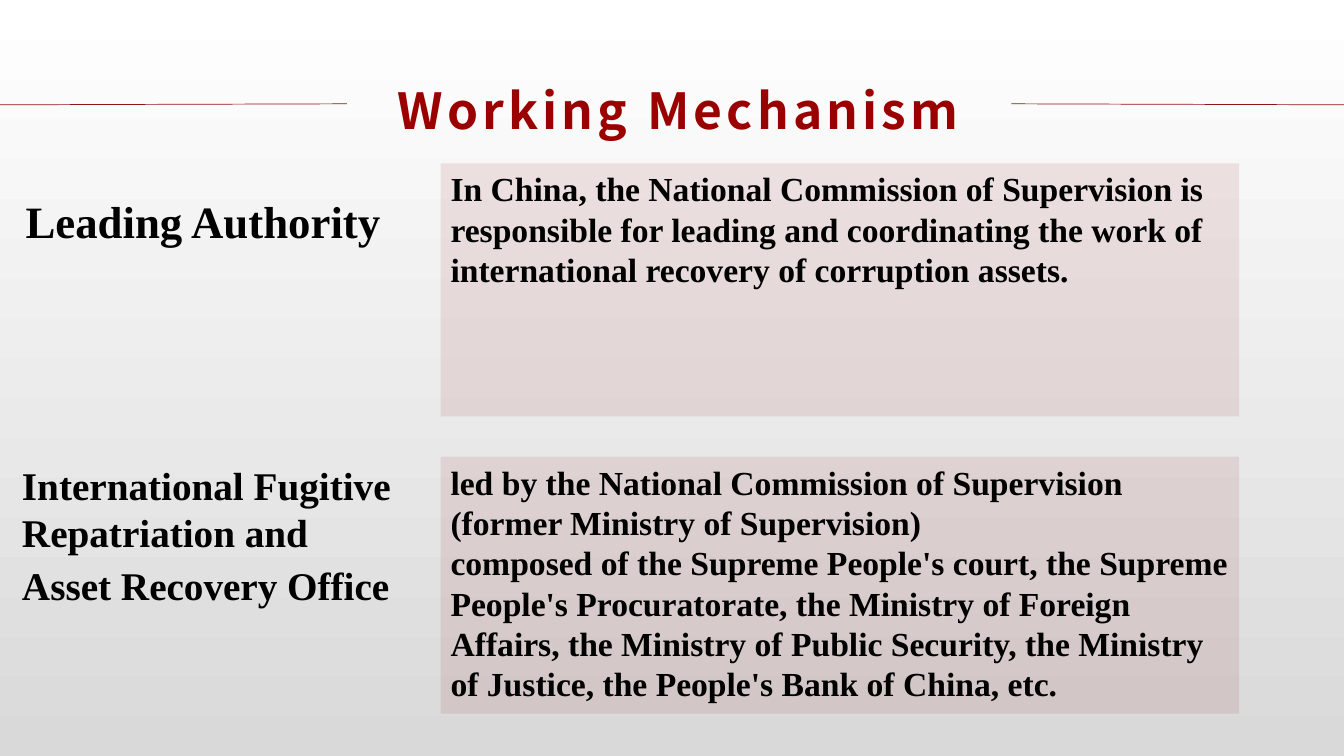
from lxml.etree import SubElement
from pptx import Presentation
from pptx.dml.color import RGBColor
from pptx.enum.shapes import MSO_CONNECTOR, MSO_SHAPE
from pptx.enum.text import MSO_ANCHOR, MSO_AUTO_SIZE, PP_ALIGN
from pptx.oxml.ns import qn
from pptx.util import Inches, Pt

COLORS = {
    "title": "9B0000",
    "accent": "8C1515",
    "text": "000000",
    "top": "FFFFFF",
    "bottom": "D9D9D9",
}
SERIF = "Times New Roman"
SANS = "Noto Sans CJK SC"
PANEL_LEFT, PANEL_WIDTH = 4.37, 7.92
LABEL_LEFT = 0.12


def color(name):
    return RGBColor.from_string(COLORS[name])


def set_font(font, name, size, shade="text", bold=True):
    font.name = name
    font.size = Pt(size)
    font.bold = bold
    font.color.rgb = color(shade)


def paint_background(page):
    fill = page.background.fill
    fill.gradient()
    fill.gradient_angle = 270
    for stop, shade in zip(fill.gradient_stops, ("top", "bottom")):
        stop.color.rgb = color(shade)


def add_heading(page, text, left, top, width, height):
    title = page.shapes.title
    title.left, title.top = Inches(left), Inches(top)
    title.width, title.height = Inches(width), Inches(height)
    frame = title.text_frame
    frame.vertical_anchor = MSO_ANCHOR.MIDDLE
    frame.auto_size = MSO_AUTO_SIZE.NONE
    para = frame.paragraphs[0]
    para.alignment = PP_ALIGN.CENTER
    para.line_spacing = 0.9
    set_font(para.font, SANS, 35.5, "title")
    span = para.add_run()
    span.text = text
    span.font._element.set("spc", "300")


def add_rule(page, start, end):
    rule = page.shapes.add_connector(
        MSO_CONNECTOR.STRAIGHT, *map(Inches, start + end))
    rule.line.color.rgb = color("accent")
    rule.line.width = Pt(0.5)
    SubElement(rule._element.spPr, qn("a:effectLst"))


def add_panel(page, texts, top, height):
    panel = page.shapes.add_shape(
        MSO_SHAPE.RECTANGLE, Inches(PANEL_LEFT), Inches(top),
        Inches(PANEL_WIDTH), Inches(height))
    panel.shadow.inherit = False
    panel.line.fill.background()
    panel.fill.solid()
    panel.fill.fore_color.rgb = color("accent")
    tint = panel.fill._xPr.find(qn("a:solidFill"))[0]
    SubElement(tint, qn("a:alpha"), val="10000")
    frame = panel.text_frame
    frame.word_wrap = True
    frame.vertical_anchor = MSO_ANCHOR.TOP
    frame.text = "\n".join(texts)
    for para in frame.paragraphs:
        para.alignment = PP_ALIGN.LEFT
        set_font(para.font, SERIF, 24)


def add_label(page, text, size, top, width, height, alignment):
    label = page.shapes.add_textbox(
        Inches(LABEL_LEFT), Inches(top), Inches(width), Inches(height))
    frame = label.text_frame
    frame.word_wrap = True
    frame.auto_size = MSO_AUTO_SIZE.SHAPE_TO_FIT_TEXT
    para = frame.paragraphs[0]
    para.alignment = alignment
    set_font(para.font, SERIF, size)
    para.add_run().text = text
    return para


def build_mechanism_slide(deck):
    page = deck.slides.add_slide(deck.slide_layouts[5])
    paint_background(page)
    add_heading(page, "Working Mechanism", 3.44, 0.64, 6.58, 0.98)
    add_rule(page, (0, 1.04), (3.44, 1.03))
    add_rule(page, (10.03, 1.03), (13.33, 1.04))

    add_panel(page, [
        "In China, the National Commission of Supervision is responsible for "
        "leading and coordinating the work of international recovery of "
        "corruption assets.",
    ], 1.62, 2.51)
    add_label(page, "Leading Authority ", 32, 1.87, 3.79, 0.64,
              PP_ALIGN.CENTER)

    office = add_label(
        page, "International Fugitive Repatriation and Asset Recovery Office",
        28, 4.53, 3.96, 1.58, PP_ALIGN.LEFT)
    tail = office.add_run()
    tail.text = " "
    set_font(tail.font, SANS, 32, bold=False)
    add_panel(page, [
        "led by the National Commission of Supervision (former Ministry of "
        "Supervision)",
        "composed of the Supreme People's court, the Supreme People's "
        "Procuratorate, the Ministry of Foreign Affairs, the Ministry of "
        "Public Security, the Ministry of Justice, the People's Bank of "
        "China, etc.",
    ], 4.53, 2.55)


def main():
    deck = Presentation()
    deck.slide_width, deck.slide_height = Inches(13.33), Inches(7.5)
    build_mechanism_slide(deck)
    deck.save("out.pptx")


if __name__ == "__main__":
    main()
